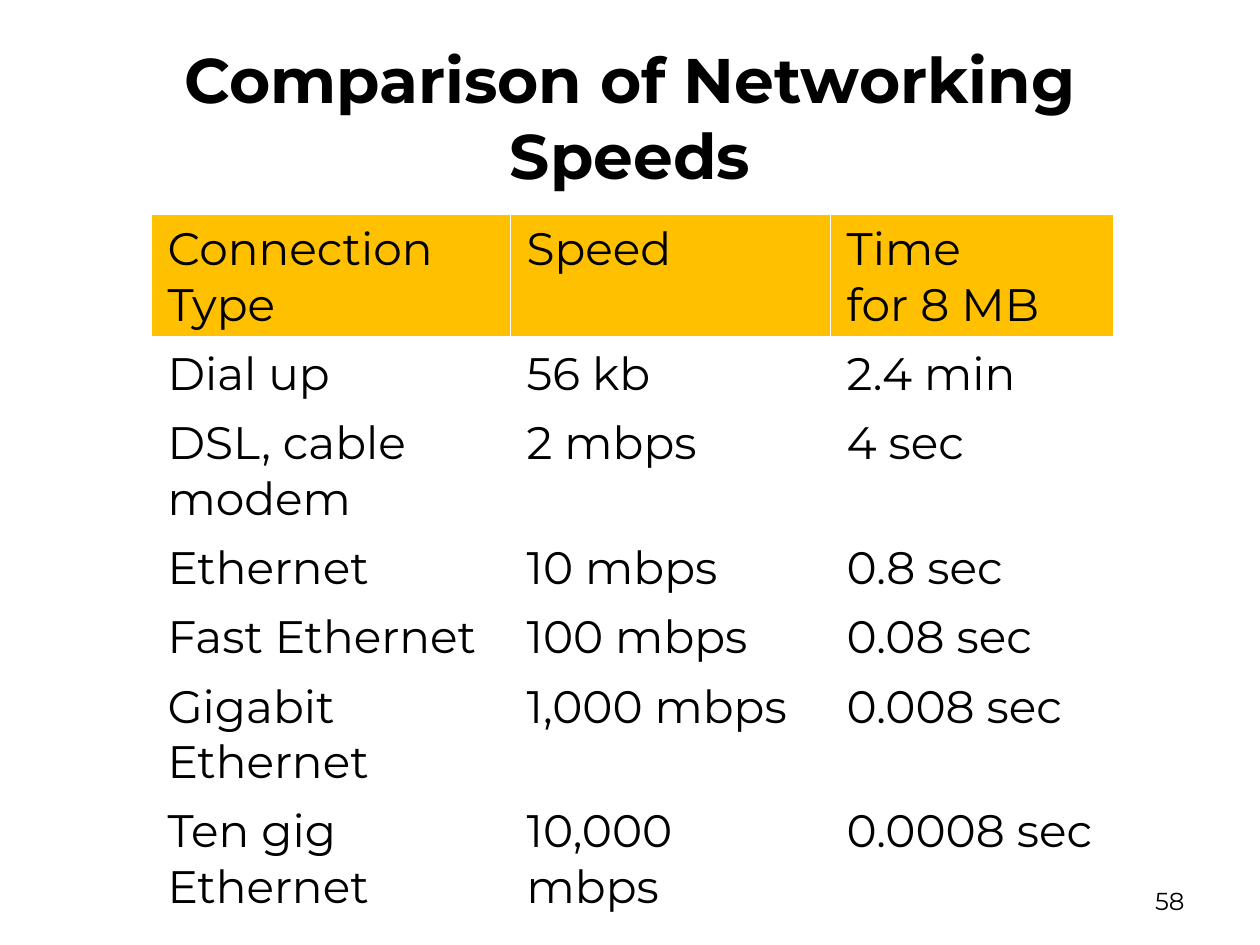
import dataclasses

import pptx
import pptx.dml.color
import pptx.enum.text
import pptx.oxml
import pptx.oxml.ns
import pptx.util

Inches = pptx.util.Inches
Pt = pptx.util.Pt
Align = pptx.enum.text.PP_ALIGN

FONT = "Montserrat"
COLORS = {"text": "000000", "header": "FFC000", "body": "FFFFFF", "border": "FFFFFF"}
COLUMN_WIDTHS = (2.85, 2.54, 2.25)
ROW_HEIGHTS = (0.98, 0.55, 0.98, 0.55, 0.55, 0.55, 0.55)
SPEEDS = (
    ("Connection Type", "Speed", "Time \nfor 8 MB"),
    ("Dial up", "56 kb", "2.4 min"),
    ("DSL, cable modem", "2 mbps", "4 sec"),
    ("Ethernet", "10 mbps", "0.8 sec"),
    ("Fast Ethernet", "100 mbps", "0.08 sec"),
    ("Gigabit Ethernet", "1,000 mbps", "0.008 sec"),
    ("Ten gig Ethernet", "10,000 mbps", "0.0008 sec"),
)


@dataclasses.dataclass(frozen=True)
class Label:
    text: str
    left: float
    top: float
    width: float
    height: float
    size: float
    align: Align
    bold: bool = False


LABELS = (
    Label("Comparison of Networking Speeds", 0.5, 0.3, 9, 1.25, 36, Align.CENTER, True),
    Label("58", 7.17, 6.95, 2.33, 0.4, 14, Align.RIGHT),
)


def color(name: str) -> pptx.dml.color.RGBColor:
    return pptx.dml.color.RGBColor.from_string(COLORS[name])


def write(para, text: str, size: float, bold: bool = False) -> None:
    for index, line in enumerate(text.split("\n")):
        if index:
            para.add_line_break()
        span = para.add_run()
        span.text = line
        span.font.name = FONT
        span.font.size = Pt(size)
        span.font.bold = bold
        span.font.color.rgb = color("text")


def draw_label(page, label: Label) -> None:
    box = page.shapes.add_textbox(
        Inches(label.left), Inches(label.top), Inches(label.width), Inches(label.height)
    )
    frame = box.text_frame
    frame.word_wrap = True
    frame.vertical_anchor = pptx.enum.text.MSO_ANCHOR.MIDDLE
    para = frame.paragraphs[0]
    para.alignment = label.align
    write(para, label.text, label.size, label.bold)


def add_borders(cell, bottom: float) -> None:
    properties = cell._tc.get_or_add_tcPr()
    for side, width in (("L", 1), ("R", 1), ("T", 1), ("B", bottom)):
        properties.append(pptx.oxml.parse_xml(
            f'<a:ln{side} {pptx.oxml.ns.nsdecls("a")} w="{Pt(width)}"><a:solidFill>'
            f'<a:srgbClr val="{COLORS["border"]}"/></a:solidFill></a:ln{side}>'
        ))


def draw_cell(cell, text: str, header: bool) -> None:
    cell.margin_left = cell.margin_right = Inches(0.13)
    cell.margin_top = cell.margin_bottom = Inches(0.06)
    add_borders(cell, 3 if header else 1)
    cell.fill.solid()
    cell.fill.fore_color.rgb = color("header" if header else "body")
    write(cell.text_frame.paragraphs[0], text, 26)


def draw_table(page) -> None:
    table = page.shapes.add_table(
        len(SPEEDS), len(COLUMN_WIDTHS),
        Inches(1.2), Inches(1.7), Inches(sum(COLUMN_WIDTHS)), Inches(sum(ROW_HEIGHTS)),
    ).table
    table.horz_banding = False
    for column, width in zip(table.columns, COLUMN_WIDTHS):
        column.width = Inches(width)
    for index, (row, height, texts) in enumerate(zip(table.rows, ROW_HEIGHTS, SPEEDS)):
        row.height = Inches(height)
        for cell, text in zip(row.cells, texts):
            draw_cell(cell, text, header=index == 0)


def main() -> None:
    deck = pptx.Presentation()
    deck.slide_width, deck.slide_height = Inches(10), Inches(7.5)
    page = deck.slides.add_slide(deck.slide_layouts[6])
    for label in LABELS:
        draw_label(page, label)
    draw_table(page)
    deck.save("out.pptx")


if __name__ == "__main__":
    main()
